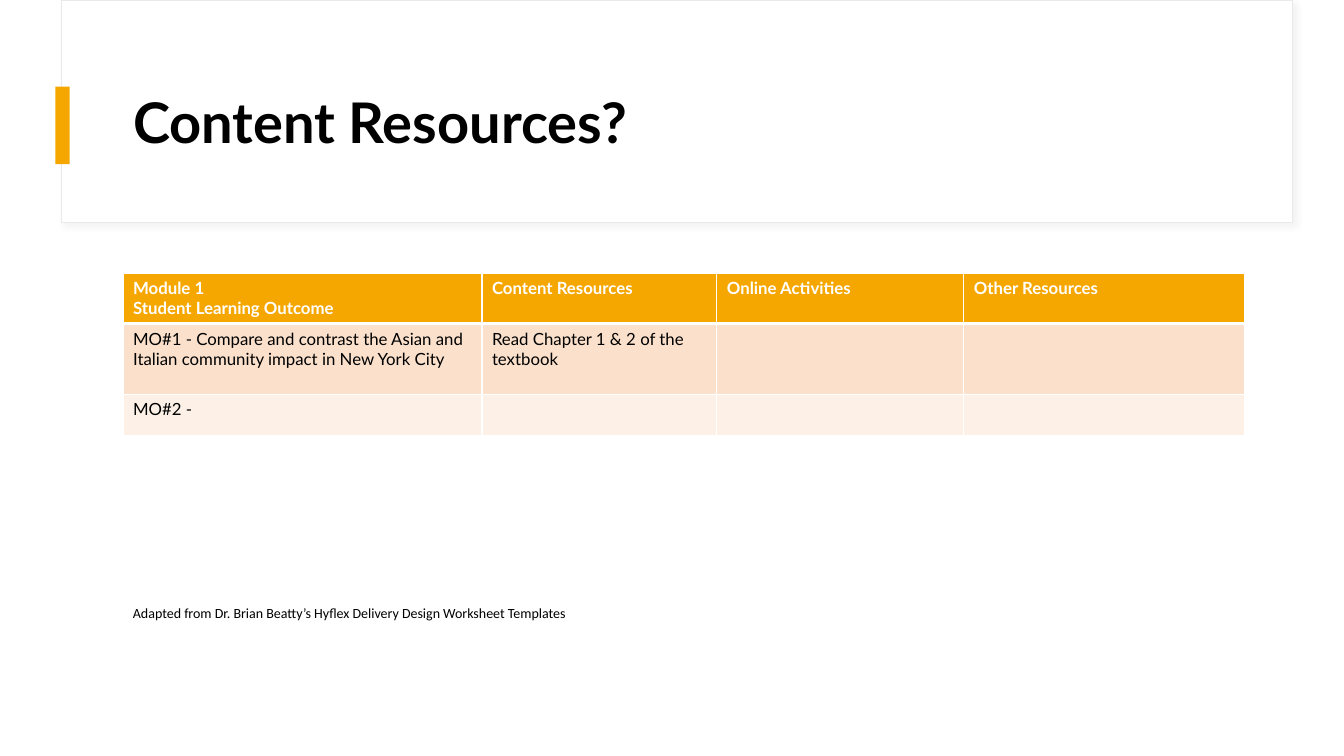
from lxml import etree
from pptx import Presentation
from pptx.dml.color import RGBColor
from pptx.enum.shapes import MSO_SHAPE
from pptx.enum.text import MSO_ANCHOR, PP_ALIGN
from pptx.oxml import parse_xml
from pptx.oxml.ns import nsdecls, qn
from pptx.util import Inches, Pt

RECTANGLE = MSO_SHAPE.RECTANGLE
MIDDLE = MSO_ANCHOR.MIDDLE
LEFT = PP_ALIGN.LEFT
TITLE_ONLY = 5

COLORS = {
    "white": "FFFFFF",
    "black": "000000",
    "accent": "F5A700",
    "outline": "E9E9E9",
    "shadow": "D9D9D9",
    "band_dark": "FBE1CC",
    "band_light": "FDF1E7",
}

COLUMN_WIDTHS = [3.56, 2.33, 2.45, 2.78]
ROW_HEIGHTS = [0.49, 0.7, 0.41]
ROW_FILLS = ["accent", "band_dark", "band_light"]
ROWS = [
    [["Module 1", "Student Learning Outcome"], ["Content Resources"],
     ["Online Activities"], ["Other Resources"]],
    [["MO#1 - Compare and contrast the Asian and Italian community impact in New York City"],
     ["Read Chapter 1 & 2 of the textbook"], [], []],
    [["MO#2 -"], [], [], []],
]


def rgb(name):
    return RGBColor.from_string(COLORS[name])


def add_span(para, text, size, color="black", font="Lato", bold=False):
    span = para.add_run()
    span.text = text
    span.font.name = font
    span.font.size = Pt(size)
    span.font.bold = bold
    span.font.color.rgb = rgb(color)


def add_box(page, left, top, width, height, fill):
    box = page.shapes.add_shape(
        RECTANGLE, Inches(left), Inches(top), Inches(width), Inches(height))
    box.shadow.inherit = False
    box.fill.solid()
    box.fill.fore_color.rgb = rgb(fill)
    box.line.fill.background()
    return box


def add_soft_shadow(box):
    effects = box.element.spPr.find(qn("a:effectLst"))
    effects.append(parse_xml(
        f'<a:outerShdw {nsdecls("a")} blurRad="{Pt(4)}" dist="{Pt(3)}" dir="2700000" '
        f'algn="tl" rotWithShape="0"><a:srgbClr val="{COLORS["shadow"]}">'
        '<a:alpha val="30000"/></a:srgbClr></a:outerShdw>'))


def add_header(page, left, top, width, height):
    panel = add_box(page, left, top, width, height, "white")
    panel.line.color.rgb = rgb("outline")
    panel.line.width = Pt(0.75)
    add_soft_shadow(panel)
    add_box(page, left - 0.06, top + 0.86, 0.14, 0.77, "accent")

    title = page.shapes.title
    title.element.getparent().append(title.element)
    title.left, title.top = Inches(left + 0.61), Inches(top + 0.6)
    title.width, title.height = Inches(width - 1.09), Inches(1.29)
    frame = title.text_frame
    frame.word_wrap = True
    frame.vertical_anchor = MIDDLE
    para = frame.paragraphs[0]
    para.alignment = LEFT
    para.line_spacing = 0.9
    add_span(para, "Content Resources?", 40, bold=True)


def set_borders(cell, widths):
    """Draw white cell borders; widths maps side letters to points."""
    properties = cell._tc.get_or_add_tcPr()
    for side, width in widths.items():
        line = etree.SubElement(properties, qn(f"a:ln{side}"), w=str(Pt(width)))
        fill = etree.SubElement(line, qn("a:solidFill"))
        etree.SubElement(fill, qn("a:srgbClr"), val=COLORS["white"])


def fill_cell(cell, lines, fill, is_header, below_header):
    set_borders(cell, {"L": 1, "R": 1, "T": 3 if below_header else 1,
                       "B": 3 if is_header else 1})
    cell.fill.solid()
    cell.fill.fore_color.rgb = rgb(fill)
    frame = cell.text_frame
    for index, text in enumerate(lines):
        para = frame.add_paragraph() if index else frame.paragraphs[0]
        add_span(para, text, 12, "white" if is_header else "black", bold=is_header)


def add_outcome_table(page, left, top):
    table = page.shapes.add_table(
        len(ROWS), len(COLUMN_WIDTHS), Inches(left), Inches(top),
        Inches(sum(COLUMN_WIDTHS)), Inches(sum(ROW_HEIGHTS))).table
    for column, width in zip(table.columns, COLUMN_WIDTHS):
        column.width = Inches(width)
    for r, (row, height) in enumerate(zip(table.rows, ROW_HEIGHTS)):
        row.height = Inches(height)
        for cell, lines in zip(row.cells, ROWS[r]):
            fill_cell(cell, lines, ROW_FILLS[r], r == 0, r == 1)


def add_credit(page, left, top, width, height):
    box = page.shapes.add_textbox(
        Inches(left), Inches(top), Inches(width), Inches(height))
    box.text_frame.word_wrap = True
    add_span(box.text_frame.paragraphs[0],
             "Adapted from Dr. Brian Beatty’s Hyflex Delivery Design Worksheet Templates",
             10, font="Calibri")


def main():
    deck = Presentation()
    deck.slide_width, deck.slide_height = Inches(13.33), Inches(7.5)
    page = deck.slides.add_slide(deck.slide_layouts[TITLE_ONLY])
    add_header(page, 0.61, 0, 12.21, 2.21)
    add_outcome_table(page, 1.22, 2.71)
    add_credit(page, 1.22, 5.95, 9.11, 0.57)
    deck.save("out.pptx")


if __name__ == "__main__":
    main()
